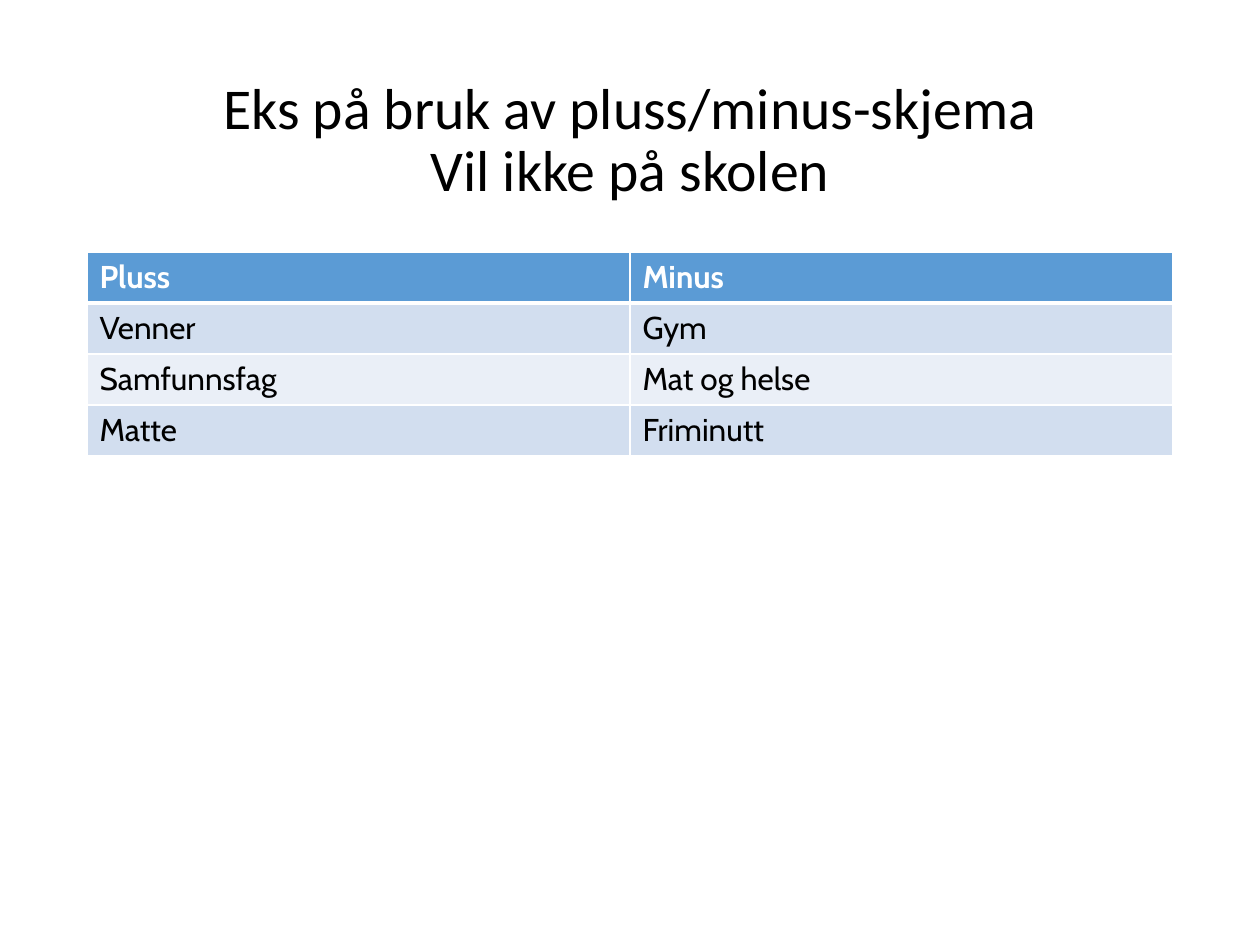
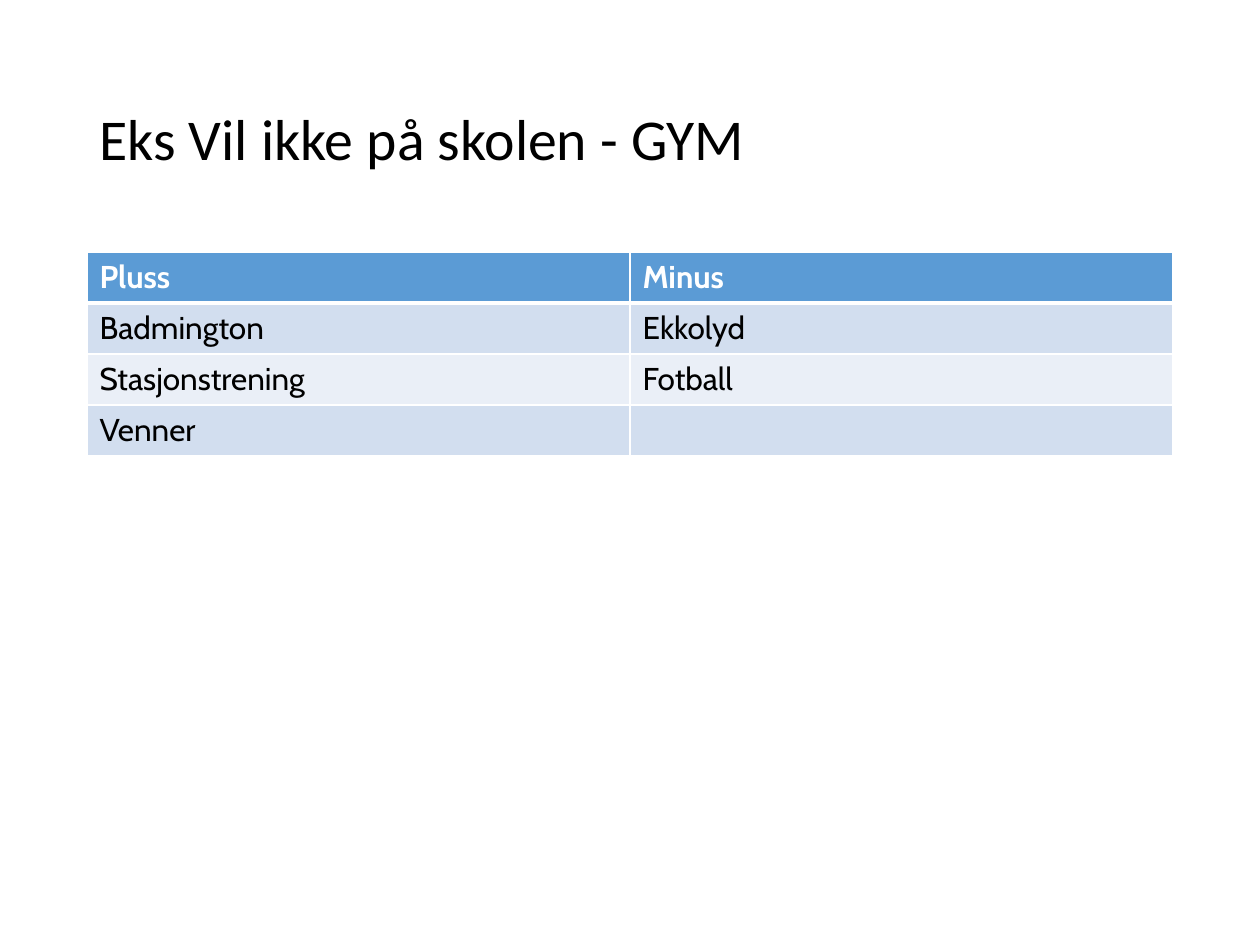
from dataclasses import dataclass

from lxml import etree
from pptx import Presentation
from pptx import util as u
from pptx.dml.color import RGBColor
from pptx.enum import text
from pptx.oxml import ns


@dataclass(frozen=True)
class Theme:
    """Colours, fonts, type sizes and line widths of the deck."""
    ink: str = "000000"
    paper: str = "FFFFFF"
    head: str = "5B9BD5"
    bands: tuple = ("D2DEEF", "EAEFF7")
    title: str = "Calibri"
    body: str = "Cabin"
    big: int = 33
    mid: int = 18
    thin: int = 1
    thick: int = 3


T = Theme()
WIDE, HIGH = u.Inches(10), u.Inches(7.5)
EDGE = u.Inches(0.69)
SPAN = WIDE - 2 * EDGE
TITLE = (EDGE, u.Inches(0.4), SPAN, u.Inches(1.45))
GRID = (EDGE, u.Inches(2), SPAN, u.Inches(1.62))
HEADS = ("Pluss", "Minus")
ALIGN = text.PP_ALIGN
SLIDES = (
    (("Eks på bruk av pluss/minus-skjema", "Vil ikke på skolen"), ALIGN.CENTER,
     (("Venner", "Gym"), ("Samfunnsfag", "Mat og helse"), ("Matte", "Friminutt"))),
    (("Eks Vil ikke på skolen - GYM",), ALIGN.LEFT,
     (("Badmington", "Ekkolyd"), ("Stasjonstrening", "Fotball"), ("Venner", ""))),
)


def style(obj, **form):
    """Set each attribute of an object from format values."""
    for key, val in form.items():
        setattr(obj, key, val)


def write(para, words, color, **form):
    """Add a run with its font and colour."""
    run = para.add_run()
    run.text = words
    style(run.font, **form)
    run.font.color.rgb = RGBColor.from_string(color)


def title(slide, box, lines, align):
    """Place a title, one line per item, centred in height."""
    frame = slide.shapes.add_textbox(*box).text_frame
    style(frame, word_wrap=True, vertical_anchor=text.MSO_ANCHOR.MIDDLE)
    para = frame.paragraphs[0]
    style(para, alignment=align, line_spacing=0.9)
    for i, line in enumerate(lines):
        if i:
            para.add_line_break()
        write(para, line, T.ink, name=T.title, size=u.Pt(T.big))


def border(cell, **sides):
    """Draw the sides of a cell in the given point widths."""
    props = cell._tc.get_or_add_tcPr()
    for i, (side, width) in enumerate(sides.items()):
        line = etree.Element(ns.qn(f"a:ln{side}"), w=str(u.Pt(width)))
        fill = etree.SubElement(line, ns.qn("a:solidFill"))
        etree.SubElement(fill, ns.qn("a:srgbClr"), val=T.paper)
        props.insert(i, line)


def table(slide, box, rows):
    """Fill the box with a header row and banded rows below."""
    grid = slide.shapes.add_table(len(rows), len(rows[0]), *box).table
    for r, row in enumerate(rows):
        top = r == 0
        for c, words in enumerate(row):
            cell = grid.cell(r, c)
            cell.fill.solid()
            shade = T.head if top else T.bands[(r - 1) % 2]
            cell.fill.fore_color.rgb = RGBColor.from_string(shade)
            border(cell, L=T.thin, R=T.thin,
                   T=T.thick if r == 1 else T.thin,
                   B=T.thick if top else T.thin)
            if words:
                write(cell.text_frame.paragraphs[0], words,
                      T.paper if top else T.ink,
                      name=T.body, size=u.Pt(T.mid), bold=top)


def main():
    """Build and save the deck."""
    deck = Presentation()
    style(deck, slide_width=WIDE, slide_height=HIGH)
    blank = deck.slide_layouts.get_by_name("Blank")
    for lines, align, rows in SLIDES:
        slide = deck.slides.add_slide(blank)
        title(slide, TITLE, lines, align)
        table(slide, GRID, (HEADS, *rows))
    deck.save("out.pptx")


if __name__ == "__main__":
    main()
